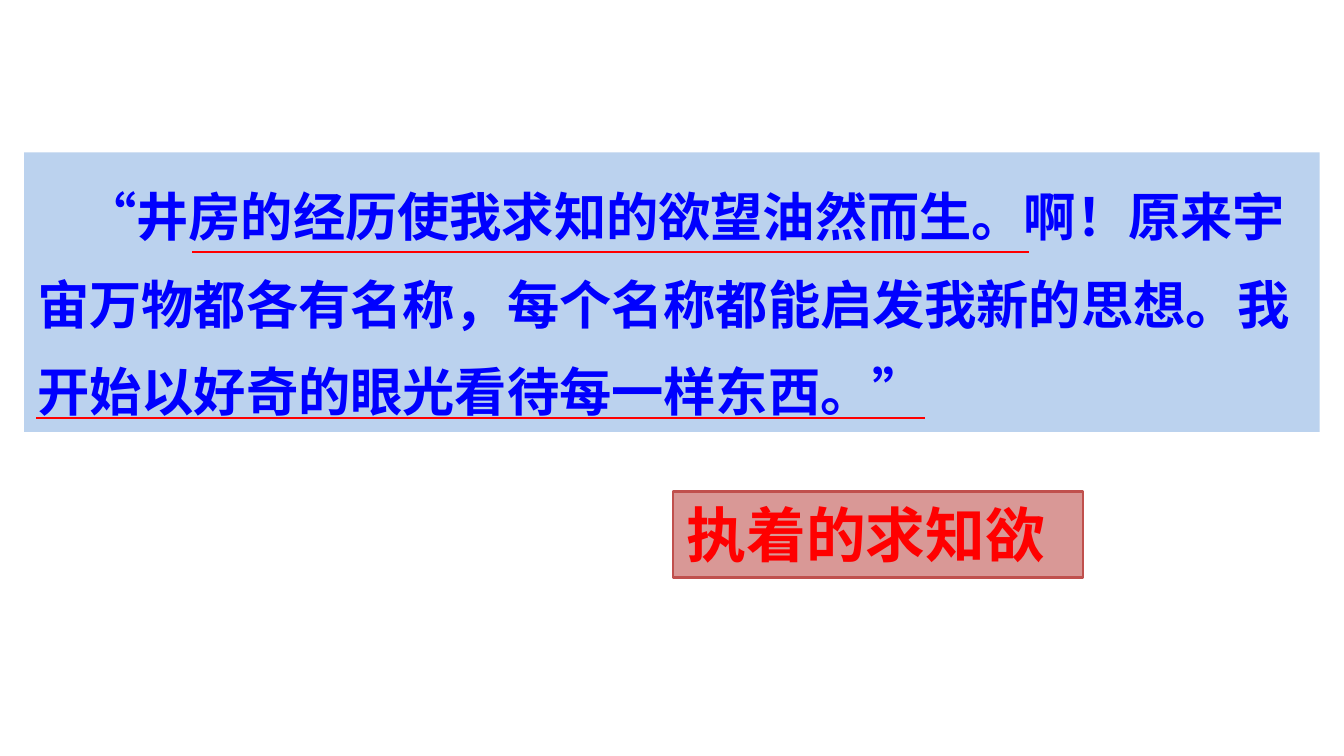
"""Build a quotation slide with two underlined passages and a theme label."""
from lxml.etree import SubElement
from pptx import Presentation
from pptx.dml.color import RGBColor
from pptx.enum.lang import MSO_LANGUAGE_ID as LANG
from pptx.enum.shapes import MSO_CONNECTOR as CONN
from pptx.enum.text import MSO_AUTO_SIZE as FIT
from pptx.oxml.ns import qn
from pptx.util import Inches, Pt

COLS, ROWS = 100, 56.25
CELL = Inches(0.1)
FONT = "Noto Sans CJK SC"

RED = RGBColor(0xFF, 0x00, 0x00)
BLUE = RGBColor(0x00, 0x00, 0xFF)
PALE_BLUE = RGBColor(0x8E, 0xB4, 0xE3)
BRICK = RGBColor(0xC0, 0x50, 0x4D)

QUOTE = "“井房的经历使我求知的欲望油然而生。啊！原来宇宙万物都各有名称，每个名称都能启发我新的思想。我开始以好奇的眼光看待每一样东西。”"
THEME = "执着的求知欲"
UNDERLINES = [(14.3, 76.53, 18.73), (2.7, 68.8, 31.1)]


def grid(*cells):
    return [int(n * CELL) for n in cells]


def set_line(line, color):
    line.color.rgb = color
    line.width = Pt(1.25)


def set_fill(sp, color, opacity):
    sp.fill.solid()
    sp.fill.fore_color.rgb = color
    clr = sp._element.spPr.find(f"{qn('a:solidFill')}/{qn('a:srgbClr')}")
    SubElement(clr, qn("a:alpha"), val=str(opacity * 1000))


def add_panel(s, box, text, size, color, fill, opacity):
    sp = s.shapes.add_textbox(*grid(*box))
    set_fill(sp, fill, opacity)
    tf = sp.text_frame
    tf.word_wrap = True
    tf.auto_size = FIT.SHAPE_TO_FIT_TEXT
    p = tf.paragraphs[0]
    r = p.add_run()
    r.text = text
    r.font.color.rgb = color
    formats = {"name": FONT, "size": Pt(size), "bold": True,
               "language_id": LANG.SIMPLIFIED_CHINESE}
    for key, value in formats.items():
        setattr(r.font, key, value)
    SubElement(r._r.get_or_add_rPr(), qn("a:ea"), typeface=FONT)
    return sp, p


def add_underline(s, left, right, y):
    c = s.shapes.add_connector(CONN.STRAIGHT, *grid(left, y, right, y))
    set_line(c.line, RED)
    SubElement(c._element.spPr, qn("a:effectLst"))


def main():
    prs = Presentation()
    prs.slide_width, prs.slide_height = grid(COLS, ROWS)
    s = prs.slides.add_slide(prs.slide_layouts[6])

    _, p = add_panel(s, (1.8, 11.33, 96.4, 20.8), QUOTE, 28, BLUE, PALE_BLUE, 60)
    p.line_spacing = 1.4
    p._p.get_or_add_pPr().set("indent", str(Inches(0.35)))

    for left, right, y in UNDERLINES:
        add_underline(s, left, right, y)

    label, _ = add_panel(s, (50.1, 36.57, 30.5, 6.4), THEME, 32, RED, BRICK, 59)
    set_line(label.line, BRICK)

    prs.save("out.pptx")


if __name__ == "__main__":
    main()
